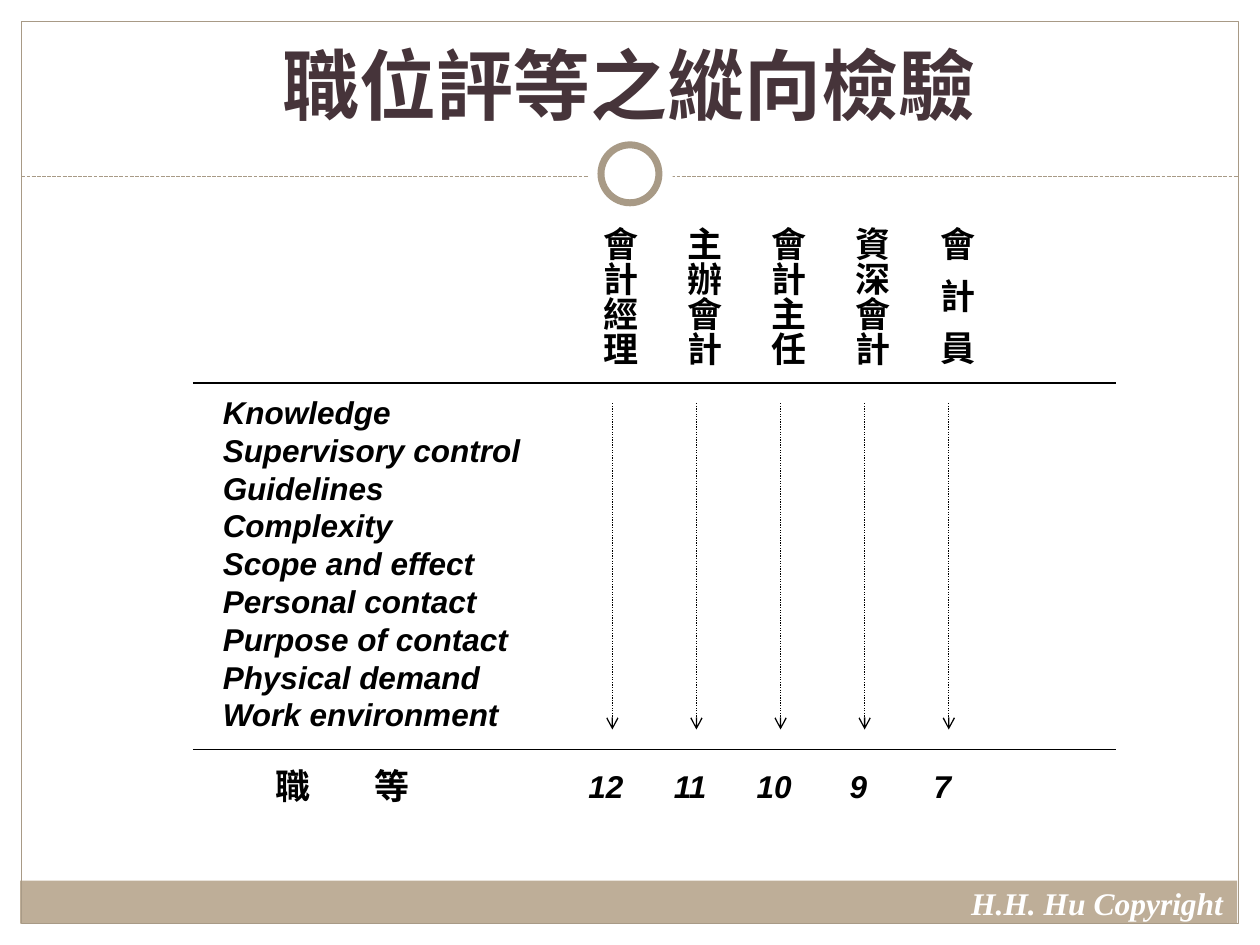
from dataclasses import dataclass
from typing import Optional

from pptx import Presentation
from pptx.dml.color import RGBColor
from pptx.enum.dml import MSO_LINE
from pptx.enum.shapes import MSO_CONNECTOR, MSO_SHAPE
from pptx.enum.text import MSO_ANCHOR, PP_ALIGN
from pptx.oxml.ns import qn
from pptx.oxml.xmlchemy import OxmlElement
from pptx.shapes.autoshape import Shape
from pptx.util import Inches, Pt


@dataclass(frozen=True)
class Theme:
    black: RGBColor = RGBColor(0x00, 0x00, 0x00)
    white: RGBColor = RGBColor(0xFF, 0xFF, 0xFF)
    band: RGBColor = RGBColor(0xBE, 0xAE, 0x98)
    rule: RGBColor = RGBColor(0xA8, 0x9A, 0x86)
    title: RGBColor = RGBColor(0x46, 0x34, 0x3A)
    sans: str = "Arial"
    serif: str = "Times New Roman"
    title_size: float = 44
    heading_size: float = 20
    body_size: float = 18
    hairline: float = 0.75
    ring: float = 4


@dataclass(frozen=True)
class Box:
    left: float
    top: float
    width: float
    height: float


@dataclass(frozen=True)
class TextStyle:
    size: float
    color: RGBColor = Theme.black
    font: str = Theme.sans
    italic: bool = False
    align: PP_ALIGN = PP_ALIGN.LEFT
    anchor: MSO_ANCHOR = MSO_ANCHOR.TOP
    letter_gap: float = 0  # points between characters
    vertical: bool = False


@dataclass(frozen=True)
class Job:
    title: str
    grade: str
    letter_gap: float = 0


THEME = Theme()
JOBS = [
    Job("會計經理", "12"),
    Job("主辦會計", "11"),
    Job("會計主任", "10"),
    Job("資深會計", "9"),
    Job("會計員", "7", letter_gap=9.7),
]
FACTORS = [
    "Knowledge", "Supervisory control", "Guidelines", "Complexity",
    "Scope and effect", "Personal contact", "Purpose of contact",
    "Physical demand", "Work environment",
]
FIRST_COLUMN, LAST_COLUMN = 4.86, 7.53
COLUMN_STEP = (LAST_COLUMN - FIRST_COLUMN) / (len(JOBS) - 1)
COLUMN_WIDTH = 0.5


def add_text(slide, box: Box, lines: list[str], style: TextStyle) -> None:
    text_box = slide.shapes.add_textbox(
        Inches(box.left), Inches(box.top), Inches(box.width), Inches(box.height))
    frame = text_box.text_frame
    frame.word_wrap = True
    frame.vertical_anchor = style.anchor
    if style.vertical:
        frame.margin_left = frame.margin_right = 0
        frame.margin_top, frame.margin_bottom = Inches(0.1), 0
        frame._txBody.bodyPr.set("vert", "eaVert")
    for index, line in enumerate(lines):
        paragraph = frame.paragraphs[0] if index == 0 else frame.add_paragraph()
        paragraph.alignment = style.align
        run = paragraph.add_run()
        run.text = line
        if style.letter_gap:
            run._r.get_or_add_rPr().set("spc", str(round(style.letter_gap * 100)))
        font = paragraph.font
        font.name, font.size = style.font, Pt(style.size)
        font.bold, font.italic = True, style.italic
        font.color.rgb = style.color


def add_shape(slide, kind: MSO_SHAPE, box: Box, fill: Optional[RGBColor] = None,
              line: Optional[RGBColor] = None, width: float = THEME.hairline) -> Shape:
    shape = slide.shapes.add_shape(
        kind, Inches(box.left), Inches(box.top), Inches(box.width), Inches(box.height))
    shape.shadow.inherit = False
    if fill is None:
        shape.fill.background()
    else:
        shape.fill.solid()
        shape.fill.fore_color.rgb = fill
    if line is None:
        shape.line.fill.background()
    else:
        shape.line.color.rgb = line
        shape.line.width = Pt(width)
    return shape


def add_line(slide, start: tuple[float, float], end: tuple[float, float],
             color: RGBColor = THEME.black, dash: Optional[MSO_LINE] = None,
             arrow: bool = False) -> None:
    connector = slide.shapes.add_connector(
        MSO_CONNECTOR.STRAIGHT, *(Inches(value) for value in (*start, *end)))
    connector.line.color.rgb = color
    connector.line.width = Pt(THEME.hairline)
    if dash is not None:
        connector.line.dash_style = dash
    properties = connector._element.spPr
    if arrow:
        tail = OxmlElement("a:tailEnd")
        tail.set("type", "arrow")
        properties.find(qn("a:ln")).append(tail)
    properties.append(OxmlElement("a:effectLst"))


def add_frame(slide) -> None:
    # Footer band, border, and divider broken by a ring
    add_shape(slide, MSO_SHAPE.RECTANGLE, Box(0.16, 6.99, 9.66, 0.34), THEME.band)
    add_shape(slide, MSO_SHAPE.RECTANGLE, Box(0.17, 0.17, 9.66, 7.16), line=THEME.rule)
    add_line(slide, (0.17, 1.4), (9.83, 1.4), THEME.rule, MSO_LINE.SQUARE_DOT)
    add_shape(slide, MSO_SHAPE.OVAL, Box(4.67, 1.05, 0.67, 0.67), THEME.white)
    add_shape(slide, MSO_SHAPE.OVAL, Box(4.77, 1.15, 0.46, 0.46), THEME.white,
              THEME.rule, THEME.ring)
    add_text(slide, Box(7.61, 6.97, 2.27, 0.4), ["H.H. Hu Copyright"],
             TextStyle(THEME.body_size, THEME.white, THEME.serif, italic=True))


def add_job(slide, job: Job, column: float) -> None:
    heading = TextStyle(THEME.heading_size, anchor=MSO_ANCHOR.MIDDLE,
                        letter_gap=job.letter_gap, vertical=True)
    add_text(slide, Box(column + 0.06 - COLUMN_WIDTH / 2, 1.7, COLUMN_WIDTH, 1.6),
             [job.title], heading)
    add_line(slide, (column, 3.2), (column, 5.79), dash=MSO_LINE.ROUND_DOT, arrow=True)
    grade = TextStyle(THEME.body_size, italic=True, align=PP_ALIGN.CENTER)
    add_text(slide, Box(column - 0.05 - COLUMN_WIDTH / 2, 6.04, COLUMN_WIDTH, 0.4),
             [job.grade], grade)


def main() -> None:
    presentation = Presentation()
    presentation.slide_width, presentation.slide_height = Inches(10), Inches(7.5)
    slide = presentation.slides.add_slide(presentation.slide_layouts[6])

    add_frame(slide)
    add_text(slide, Box(0.33, 0.25, 9.33, 0.83), ["職位評等之縱向檢驗"],
             TextStyle(THEME.title_size, THEME.title, THEME.serif,
                       align=PP_ALIGN.CENTER, anchor=MSO_ANCHOR.BOTTOM))

    # Rating factors and grade label
    add_text(slide, Box(1.67, 3.07, 2.8, 2.83), FACTORS,
             TextStyle(THEME.body_size, italic=True))
    add_text(slide, Box(2.09, 6.02, 2, 0.44), ["職等"],
             TextStyle(THEME.heading_size, letter_gap=36.5))
    for rule_top in (3.04, 5.95):
        add_line(slide, (1.53, rule_top), (8.86, rule_top))

    # One column per job
    for index, job in enumerate(JOBS):
        add_job(slide, job, FIRST_COLUMN + index * COLUMN_STEP)

    presentation.save("out.pptx")


if __name__ == "__main__":
    main()
